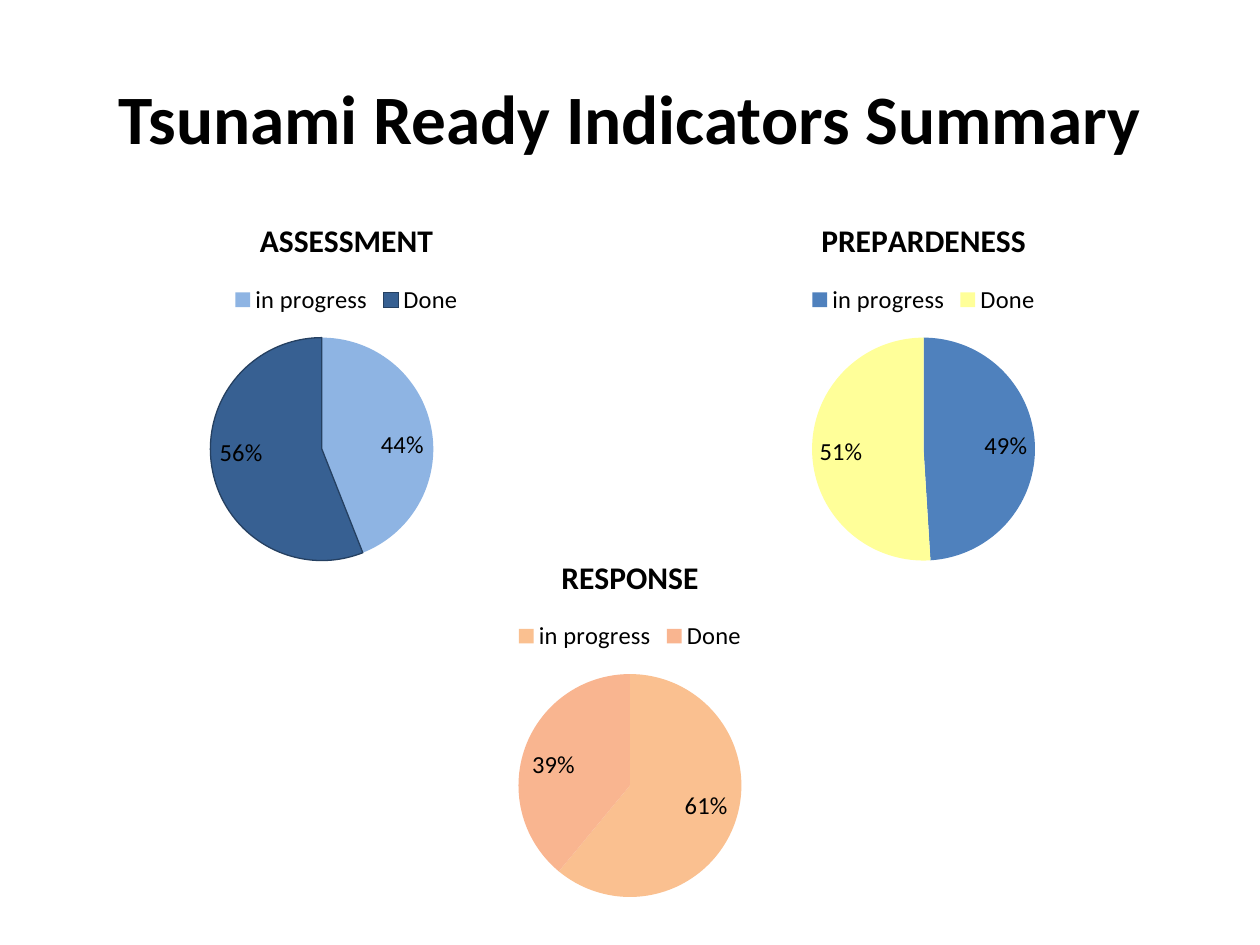
from lxml import etree
from pptx import Presentation
from pptx.chart.data import CategoryChartData
from pptx.dml.color import RGBColor
from pptx.enum.chart import XL_CHART_TYPE as ChartType
from pptx.enum.chart import XL_LABEL_POSITION as LabelPos
from pptx.enum.chart import XL_LEGEND_POSITION as LegendPos
from pptx.enum.text import MSO_ANCHOR, PP_ALIGN
from pptx.oxml.ns import qn
from pptx.util import Inches, Pt

FONT = "Calibri"
BLACK = RGBColor(0x00, 0x00, 0x00)
SKY = RGBColor(0x8E, 0xB4, 0xE3)
NAVY = RGBColor(0x37, 0x60, 0x92)
NAVY_EDGE = RGBColor(0x25, 0x40, 0x61)
BLUE = RGBColor(0x4F, 0x81, 0xBD)
YELLOW = RGBColor(0xFF, 0xFF, 0x99)
ORANGE = RGBColor(0xFA, 0xC0, 0x90)
SALMON = RGBColor(0xF9, 0xB5, 0x90)

CATEGORIES = ("in progress", "Done")
CHART_W, CHART_H = 5, 3
PIE_TOP, PIE_SIZE = 1.1, 1.77
PIE_LEFT = (CHART_W - PIE_SIZE) / 2


def style_font(font, size, bold=False):
    font.name = FONT
    font.size = Pt(size)
    font.bold = bold
    font.color.rgb = BLACK


def add_title(slide, text):
    tb = slide.shapes.add_textbox(Inches(0.5), Inches(0.3), Inches(9), Inches(1.25))
    tf = tb.text_frame
    tf.word_wrap = True
    tf.vertical_anchor = MSO_ANCHOR.MIDDLE
    tf.text = text
    p = tf.paragraphs[0]
    p.alignment = PP_ALIGN.CENTER
    style_font(p.runs[0].font, 39.6, bold=True)


def place_pie(chart, left):
    plot_area = chart.plots[0]._element.getparent()
    for old in plot_area.findall(qn("c:layout")):
        plot_area.remove(old)
    layout = etree.Element(qn("c:layout"))
    manual = etree.SubElement(layout, qn("c:manualLayout"))
    settings = (
        ("layoutTarget", "inner"),
        ("xMode", "edge"),
        ("yMode", "edge"),
        ("x", left / CHART_W),
        ("y", PIE_TOP / CHART_H),
        ("w", PIE_SIZE / CHART_W),
        ("h", PIE_SIZE / CHART_H),
    )
    for name, value in settings:
        etree.SubElement(manual, qn(f"c:{name}")).set("val", str(value))
    plot_area.insert(0, layout)


def add_pie(slide, title, x, y, values, colors, pie_left=PIE_LEFT):
    data = CategoryChartData()
    data.categories = CATEGORIES
    data.add_series("Series 1", values)
    chart = slide.shapes.add_chart(
        ChartType.PIE, Inches(x), Inches(y), Inches(CHART_W), Inches(CHART_H), data
    ).chart
    style_font(chart.font, 10)

    chart.has_title = True
    tf = chart.chart_title.text_frame
    tf.text = title
    style_font(tf.paragraphs[0].runs[0].font, 18, bold=True)

    chart.has_legend = True
    chart.legend.position = LegendPos.TOP
    chart.legend.include_in_layout = False
    style_font(chart.legend.font, 14)

    plot = chart.plots[0]
    plot.vary_by_categories = True
    for i, color in enumerate(colors):
        fill = plot.series[0].points[i].format.fill
        fill.solid()
        fill.fore_color.rgb = color

    plot.has_data_labels = True
    labels = plot.data_labels
    labels.show_value = False
    labels.show_percentage = True
    labels.number_format = "0%"
    labels.number_format_is_linked = False
    labels.position = LabelPos.INSIDE_END
    style_font(labels.font, 14)
    place_pie(chart, pie_left)
    return chart


def main():
    prs = Presentation()
    prs.slide_width = Inches(10)
    prs.slide_height = Inches(7.5)
    s = prs.slides.add_slide(prs.slide_layouts[6])

    add_title(s, "Tsunami Ready Indicators Summary")
    assessment = add_pie(s, "ASSESSMENT", 0.25, 1.58, (44, 56), (SKY, NAVY), pie_left=1.42)
    edge = assessment.plots[0].series[0].points[1].format.line
    edge.color.rgb = NAVY_EDGE
    edge.width = Pt(0.75)
    add_pie(s, "PREPARDENESS", 4.83, 1.58, (49, 51), (BLUE, YELLOW))
    add_pie(s, "RESPONSE", 2.5, 4.25, (61, 39), (ORANGE, SALMON))

    prs.save("out.pptx")


if __name__ == "__main__":
    main()
